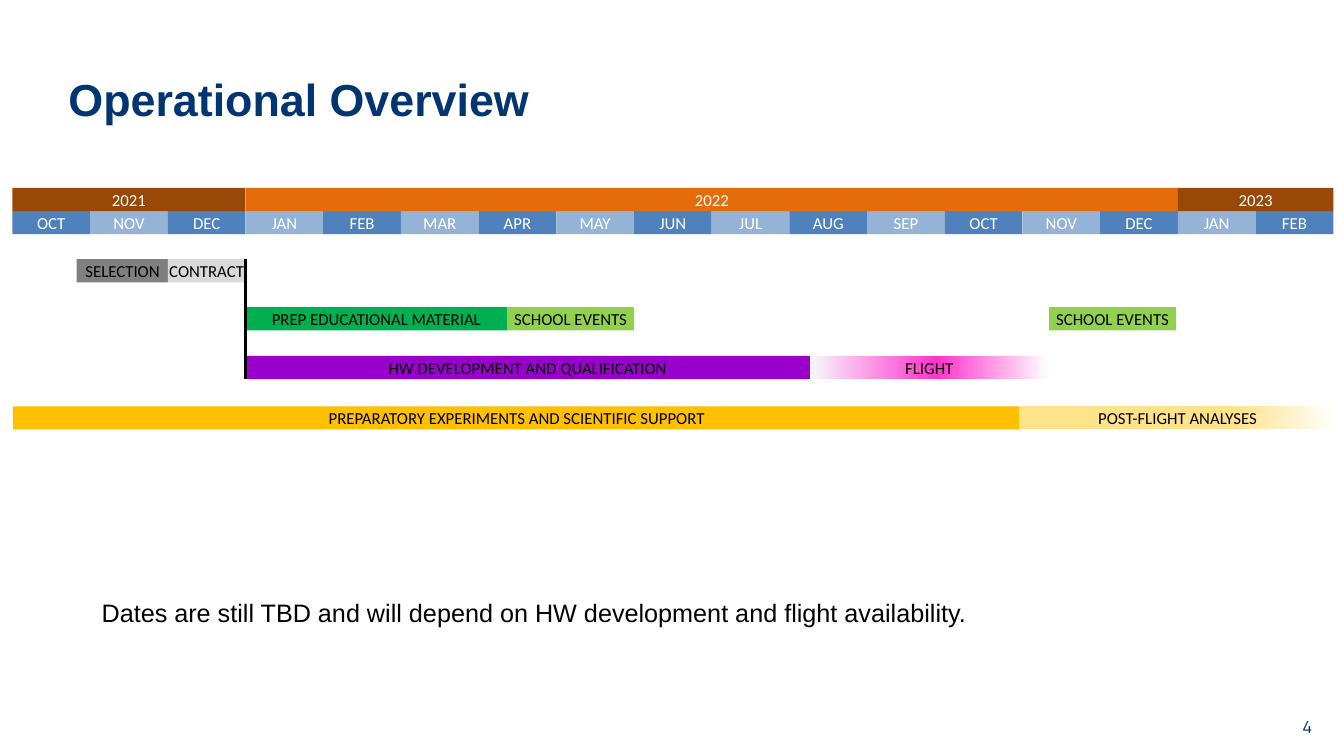
"""Build the operational overview timeline slide."""
from copy import deepcopy
from dataclasses import dataclass
from typing import Any, NamedTuple

from pptx import Presentation
from pptx.dml.color import RGBColor
from pptx.enum.shapes import MSO_CONNECTOR, MSO_SHAPE
from pptx.enum.text import MSO_ANCHOR, PP_ALIGN
from pptx.oxml.ns import qn
from pptx.util import Pt


@dataclass(frozen=True)
class Theme:
    """Colours, fonts and type sizes."""
    navy: str = "003571"
    black: str = "000000"
    white: str = "FFFFFF"
    brown: str = "984807"
    orange: str = "E46C0A"
    blue: str = "4F81BD"
    pale: str = "95B3D7"
    gray: str = "808080"
    silver: str = "D9D9D9"
    green: str = "00B050"
    lime: str = "92D050"
    purple: str = "9900CC"
    frost: str = "F6F9FC"
    pink: str = "FF33CC"
    gold: str = "FFC000"
    cream: str = "FFE38B"
    head: str = "Arial"
    label: str = "Calibri"
    number: str = "Manrope"
    large: float = 32
    medium: float = 18
    small: float = 12


class Stop(NamedTuple):
    """A gradient colour at a position from 0 to 1."""
    place: float
    color: str


class Box(NamedTuple):
    """Left, top, width and height in points."""
    left: float
    top: float
    width: float
    height: float


class Bar(NamedTuple):
    """A labelled block of the timeline."""
    text: str
    box: Box
    fill: str | tuple[Stop, ...]
    ink: str


LOOK = Theme()
LEFT, STEP, TALL = 8.9, 55.5, 16.6
YEAR, MONTH = 134.2, 150.6
ROWS = (185.2, 219.4, 254.2, 290.2)
START = LEFT + 3 * STEP
NAMES = "OCT NOV DEC JAN FEB MAR APR MAY JUN JUL AUG SEP OCT NOV DEC JAN FEB".split()
YEARS = (("2021", 0, 3, LOOK.brown), ("2022", 3, 12, LOOK.orange), ("2023", 15, 2, LOOK.brown))
FLIGHT = (Stop(0, LOOK.frost), Stop(0.53, LOOK.pink), Stop(1, LOOK.white))
FADE = (Stop(0, LOOK.cream), Stop(0.68, LOOK.cream), Stop(1, LOOK.white))
TASKS = (
    ("SELECTION", 0, 54.8, 65.6, LOOK.gray),
    ("CONTRACT", 0, LEFT + 2 * STEP, STEP, LOOK.silver),
    ("PREP EDUCATIONAL MATERIAL", 1, START, 187, LOOK.green),
    ("SCHOOL EVENTS", 1, 362.2, 90.8, LOOK.lime),
    ("HW DEVELOPMENT AND QUALIFICATION", 2, START, 403.2, LOOK.purple),
    ("FLIGHT", 2, 578.4, 170.8, FLIGHT),
    ("SCHOOL EVENTS", 1, 749.3, 90.8, LOOK.lime),
    ("PREPARATORY EXPERIMENTS AND SCIENTIFIC SUPPORT", 3, 9.2, 720, LOOK.gold),
    ("POST-FLIGHT ANALYSES", 3, 728, 226.4, FADE),
)


def apply(target: Any, values: dict[str, Any]) -> None:
    """Set each named attribute of the target."""
    for name, value in values.items():
        setattr(target, name, value)


def write(shape: Any, text: str, frame: dict[str, Any], font: dict[str, Any],
          ink: str, align: PP_ALIGN) -> Any:
    """Put one formatted paragraph into a shape and return it."""
    apply(shape.text_frame, frame)
    line = shape.text_frame.paragraphs[0]
    line.alignment = align
    run = line.add_run()
    run.text = text
    apply(run.font, font)
    run.font.color.rgb = RGBColor.from_string(ink)
    return line


def paint(shape: Any, fill: str | tuple[Stop, ...]) -> None:
    """Fill a shape with one colour or a level gradient."""
    if isinstance(fill, str):
        shape.fill.solid()
        shape.fill.fore_color.rgb = RGBColor.from_string(fill)
        return
    shape.fill.gradient()
    shape.fill.gradient_angle = 0
    holder = next(shape._element.iter(qn("a:gsLst")))
    while len(holder) < len(fill):
        holder.append(deepcopy(holder[0]))
    for mark, stop in zip(shape.fill.gradient_stops, fill):
        mark.color.rgb = RGBColor.from_string(stop.color)
        mark.position = stop.place


def block(slide: Any, box: Box, fill: str | tuple[Stop, ...]) -> Any:
    """Add a plain filled rectangle."""
    shape = slide.shapes.add_shape(MSO_SHAPE.RECTANGLE, *map(Pt, box))
    shape.shadow.inherit = False
    shape.line.fill.background()
    paint(shape, fill)
    return shape


def inner(anchor: MSO_ANCHOR) -> dict[str, Any]:
    """Give the frame format of a label without margins."""
    sides = ("left", "top", "right", "bottom")
    return {"word_wrap": False, "vertical_anchor": anchor,
            **{f"margin_{side}": Pt(0) for side in sides}}


def draw(slide: Any, bar: Bar) -> None:
    """Draw one labelled bar."""
    font = {"name": LOOK.label, "size": Pt(LOOK.small)}
    write(block(slide, bar.box, bar.fill), bar.text, inner(MSO_ANCHOR.MIDDLE),
          font, bar.ink, PP_ALIGN.CENTER)


def prose(slide: Any, text: str, box: Box, font: dict[str, Any],
          ink: str, align: PP_ALIGN) -> Any:
    """Add a wrapping text box and return its paragraph."""
    shape = slide.shapes.add_textbox(*map(Pt, box))
    frame = {"word_wrap": True, "vertical_anchor": MSO_ANCHOR.TOP}
    return write(shape, text, frame, font, ink, align)


def rule(slide: Any, left: float, top: float, base: float) -> None:
    """Draw the upright contract line."""
    line = slide.shapes.add_connector(
        MSO_CONNECTOR.STRAIGHT, Pt(left), Pt(top), Pt(left), Pt(base))
    line.line.color.rgb = RGBColor.from_string(LOOK.black)
    line.line.width = Pt(2)
    props = line._element.spPr
    props.append(props.makeelement(qn("a:effectLst"), {}))


def main() -> None:
    """Build and save the slide."""
    deck = Presentation()
    apply(deck, {"slide_width": Pt(960), "slide_height": Pt(540)})
    slide = deck.slides.add_slide(deck.slide_layouts[6])

    title = {"name": LOOK.head, "size": Pt(LOOK.large), "bold": True}
    prose(slide, "Operational Overview", Box(41.8, 48, 861.8, 45), title,
          LOOK.navy, PP_ALIGN.LEFT)

    bars = [Bar(name, Box(LEFT + at * STEP, MONTH, STEP, TALL),
                (LOOK.blue, LOOK.pale)[at % 2], LOOK.white)
            for at, name in enumerate(NAMES)]
    bars += [Bar(name, Box(LEFT + at * STEP, YEAR, span * STEP, TALL), fill, LOOK.white)
             for name, at, span, fill in YEARS]
    bars += [Bar(name, Box(left, ROWS[row], width, TALL), fill, LOOK.black)
             for name, row, left, width, fill in TASKS]
    for bar in bars:
        draw(slide, bar)
    rule(slide, START, ROWS[0], ROWS[2] + TALL)

    body = {"name": LOOK.head, "size": Pt(LOOK.medium)}
    note = prose(
        slide, "Dates are still TBD and will depend on HW development and flight availability.",
        Box(56.9, 412.6, 834.5, 43.2), body, LOOK.black, PP_ALIGN.JUSTIFY)
    note.line_spacing = 1.5
    apply_indent = note._p.get_or_add_pPr()
    apply_indent.set("marL", str(Pt(8.6)))
    apply_indent.set("indent", "0")

    page = block(slide, Box(918.7, 511.9, 30.2, 14.4), LOOK.white)
    write(page, "4", inner(MSO_ANCHOR.BOTTOM),
          {"name": LOOK.number, "size": Pt(LOOK.small)}, LOOK.navy, PP_ALIGN.CENTER)
    deck.save("out.pptx")


if __name__ == "__main__":
    main()
